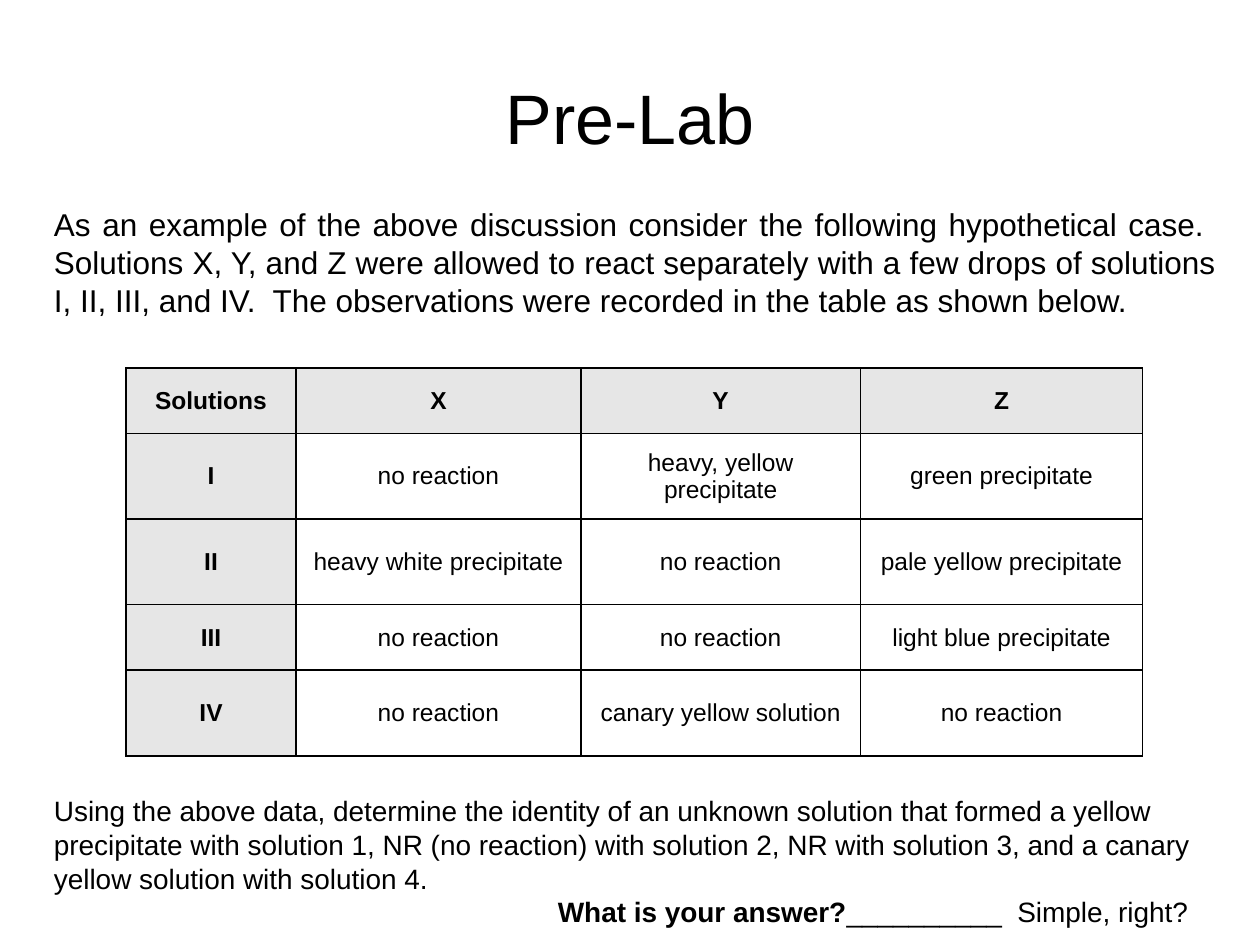
from lxml.etree import SubElement
from pptx import Presentation
from pptx.dml.color import RGBColor
from pptx.enum.text import MSO_ANCHOR, PP_ALIGN
from pptx.oxml.ns import qn
from pptx.util import Inches, Pt

BLACK = RGBColor(0x00, 0x00, 0x00)
WHITE = RGBColor(0xFF, 0xFF, 0xFF)
HEADER_GRAY = RGBColor(0xE6, 0xE6, 0xE6)

OBSERVATIONS = [
    ["Solutions", "X", "Y", "Z"],
    ["I", "no reaction", "heavy, yellow precipitate", "green precipitate"],
    ["II", "heavy white precipitate", "no reaction", "pale yellow precipitate"],
    ["III", "no reaction", "no reaction", "light blue precipitate"],
    ["IV", "no reaction", "canary yellow solution", "no reaction"],
]
INTRO = (
    "As an example of the above discussion consider the following hypothetical case.  "
    "Solutions X, Y, and Z were allowed to react separately with a few drops of solutions "
    "I, II, III, and IV.  The observations were recorded in the table as shown below."
)
QUESTION = [
    "Using the above data, determine the identity of an unknown solution that formed a yellow",
    "precipitate with solution 1, NR (no reaction) with solution 2, NR with solution 3, "
    "and a canary yellow solution with solution 4.",
    "What is your answer?",
]


class Deck:
    font = "Arial"
    columns, rows = 100, 75

    def __init__(self, width, height):
        self.prs = Presentation()
        self.prs.slide_width = Inches(width)
        self.prs.slide_height = Inches(height)
        self.s = self.prs.slides.add_slide(self.prs.slide_layouts[6])

    def x(self, columns):
        return round(self.prs.slide_width * columns / self.columns)

    def y(self, rows):
        return round(self.prs.slide_height * rows / self.rows)

    def style(self, r, size, bold=False):
        r.font.name = self.font
        r.font.size = Pt(size)
        r.font.bold = bold
        r.font.color.rgb = BLACK

    def text(self, left, top, width, height, paragraphs, size, align=PP_ALIGN.LEFT):
        box = self.s.shapes.add_textbox(self.x(left), self.y(top), self.x(width), self.y(height))
        tf = box.text_frame
        tf.word_wrap = True
        tf.vertical_anchor = MSO_ANCHOR.MIDDLE
        tf.text = "\n".join(paragraphs)
        for p in tf.paragraphs:
            p.alignment = align
            for r in p.runs:
                self.style(r, size)
        return tf

    def borders(self, cell):
        tcPr = cell._tc.get_or_add_tcPr()
        for index, side in enumerate(("lnL", "lnR", "lnT", "lnB")):
            ln = tcPr.makeelement(qn(f"a:{side}"), {"w": str(Pt(1))})
            fill = SubElement(ln, qn("a:solidFill"))
            SubElement(fill, qn("a:srgbClr"), val=str(BLACK))
            tcPr.insert(index, ln)

    def table(self, left, top, widths, heights, data, size):
        frame = self.s.shapes.add_table(
            len(heights), len(widths), self.x(left), self.y(top),
            self.x(sum(widths)), self.y(sum(heights)))
        table = frame.table
        for column, width in zip(table.columns, widths):
            column.width = self.x(width)
        for row, height in zip(table.rows, heights):
            row.height = self.y(height)
        for i, values in enumerate(data):
            for j, value in enumerate(values):
                header = i == 0 or j == 0
                cell = table.cell(i, j)
                cell.text = value
                cell.vertical_anchor = MSO_ANCHOR.MIDDLE
                cell.fill.solid()
                cell.fill.fore_color.rgb = HEADER_GRAY if header else WHITE
                p = cell.text_frame.paragraphs[0]
                p.alignment = PP_ALIGN.CENTER
                self.style(p.runs[0], size, header)
                self.borders(cell)


def main():
    deck = Deck(10, 7.5)
    deck.text(5, 3, 90, 12.5, ["Pre-Lab"], 40, PP_ALIGN.CENTER)
    deck.text(3.3, 15.8, 94.2, 10, [INTRO], 18, PP_ALIGN.JUSTIFY)
    deck.table(10, 29.2, [13.5, 22.6, 22.2, 22.4], [5.2, 6.8, 6.8, 5.2, 6.8], OBSERVATIONS, 14)
    tf = deck.text(3.3, 62.5, 96.7, 11.7, QUESTION, 16)
    answer = tf.paragraphs[-1]
    answer.runs[0].font.bold = True
    answer._p.get_or_add_pPr().set("marL", str(deck.x(40)))
    r = answer.add_run()
    r.text = "__________  Simple, right?"
    deck.style(r, 16)
    deck.prs.save("out.pptx")


if __name__ == "__main__":
    main()
